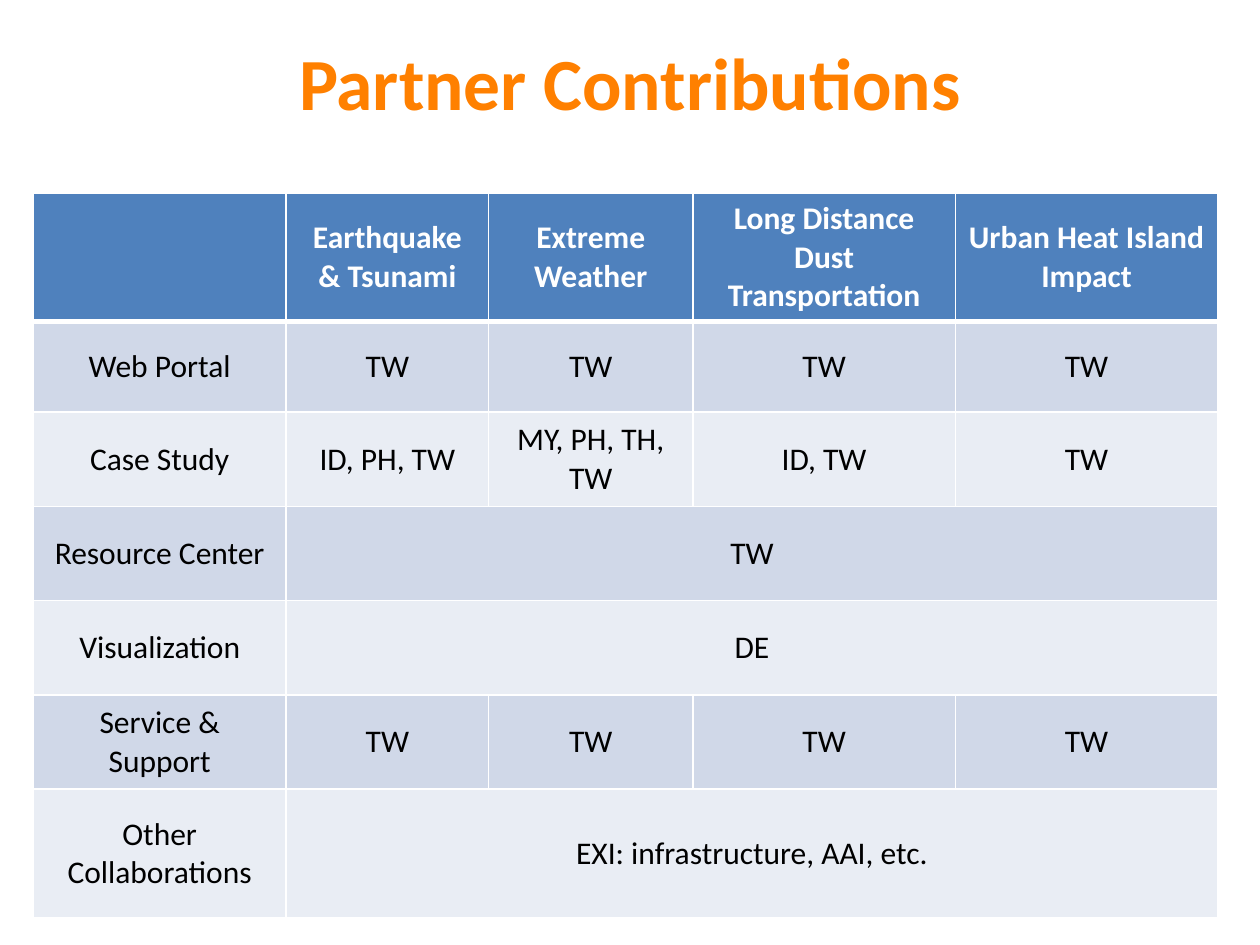
import pptx
import pptx.dml.color
import pptx.enum.text
import pptx.oxml
import pptx.oxml.ns
import pptx.util
from pptx.util import Cm

ORANGE = pptx.dml.color.RGBColor(0xFF, 0x80, 0x00)
BLUE = pptx.dml.color.RGBColor(0x4F, 0x81, 0xBD)
DARK_BAND = pptx.dml.color.RGBColor(0xD0, 0xD8, 0xE8)
LIGHT_BAND = pptx.dml.color.RGBColor(0xE9, 0xED, 0xF4)
WHITE = pptx.dml.color.RGBColor(0xFF, 0xFF, 0xFF)
BLACK = pptx.dml.color.RGBColor(0x00, 0x00, 0x00)

COLUMN_WIDTHS = [5.1, 4.08, 4.12, 5.29, 5.29]
ROW_HEIGHTS = [2.59, 1.83, 1.9, 1.9, 1.9, 1.9, 2.59]
# A row with only two entries has its second one span the remaining columns.
ROWS = [
    ["", "Earthquake & Tsunami", "Extreme Weather",
     "Long Distance Dust Transportation", "Urban Heat Island Impact"],
    ["Web Portal", "TW", "TW", "TW", "TW"],
    ["Case Study", "ID, PH, TW", "MY, PH, TH, TW", "ID, TW", "TW"],
    ["Resource Center", "TW"],
    ["Visualization", "DE"],
    ["Service & Support", "TW", "TW", "TW", "TW"],
    ["Other Collaborations", "EXI: infrastructure, AAI, etc."],
]


def set_borders(cell, widths):
    """Draw white borders; widths maps the sides L, R, T, B to points."""
    properties = cell._tc.get_or_add_tcPr()
    for side, width in widths.items():
        properties.append(pptx.oxml.parse_xml(
            f'<a:ln{side} {pptx.oxml.ns.nsdecls("a")} w="{pptx.util.Pt(width)}">'
            f'<a:solidFill><a:srgbClr val="{WHITE}"/></a:solidFill></a:ln{side}>'))


def style_text(para, size, color, bold):
    para.alignment = pptx.enum.text.PP_ALIGN.CENTER
    para.font.name = "Calibri"
    para.font.size = pptx.util.Pt(size)
    para.font.color.rgb = color
    para.font.bold = bold


deck = pptx.Presentation()
deck.slide_width = Cm(25.4)
deck.slide_height = Cm(19.05)
page = deck.slides.add_slide(deck.slide_layouts.get_by_name("Title Only"))

title = page.shapes.title
title.left, title.top, title.width, title.height = Cm(1.27), Cm(0.05), Cm(22.86), Cm(3.18)
title.text_frame.text = "Partner Contributions"
title.text_frame.vertical_anchor = pptx.enum.text.MSO_ANCHOR.MIDDLE
style_text(title.text_frame.paragraphs[0], 42, ORANGE, True)

table = page.shapes.add_table(
    len(ROWS), len(COLUMN_WIDTHS), Cm(0.67), Cm(3.89),
    Cm(sum(COLUMN_WIDTHS)), Cm(sum(ROW_HEIGHTS))).table
for column, width in zip(table.columns, COLUMN_WIDTHS):
    column.width = Cm(width)
for row, height in zip(table.rows, ROW_HEIGHTS):
    row.height = Cm(height)

last_column = len(COLUMN_WIDTHS) - 1
for row_index, entries in enumerate(ROWS):
    is_header = row_index == 0
    if is_header:
        fill_color = BLUE
    else:
        fill_color = DARK_BAND if row_index % 2 else LIGHT_BAND
    borders = {"L": 1, "R": 1, "T": 3 if row_index == 1 else 1, "B": 3 if is_header else 1}
    for cell in table.rows[row_index].cells:
        set_borders(cell, borders)
        cell.fill.solid()
        cell.fill.fore_color.rgb = fill_color
        cell.vertical_anchor = pptx.enum.text.MSO_ANCHOR.MIDDLE
    if len(entries) == 2:
        table.cell(row_index, 1).merge(table.cell(row_index, last_column))
    for column_index, entry in enumerate(entries):
        cell = table.cell(row_index, column_index)
        cell.text = entry
        style_text(cell.text_frame.paragraphs[0], 18, WHITE if is_header else BLACK, is_header)

deck.save("out.pptx")
